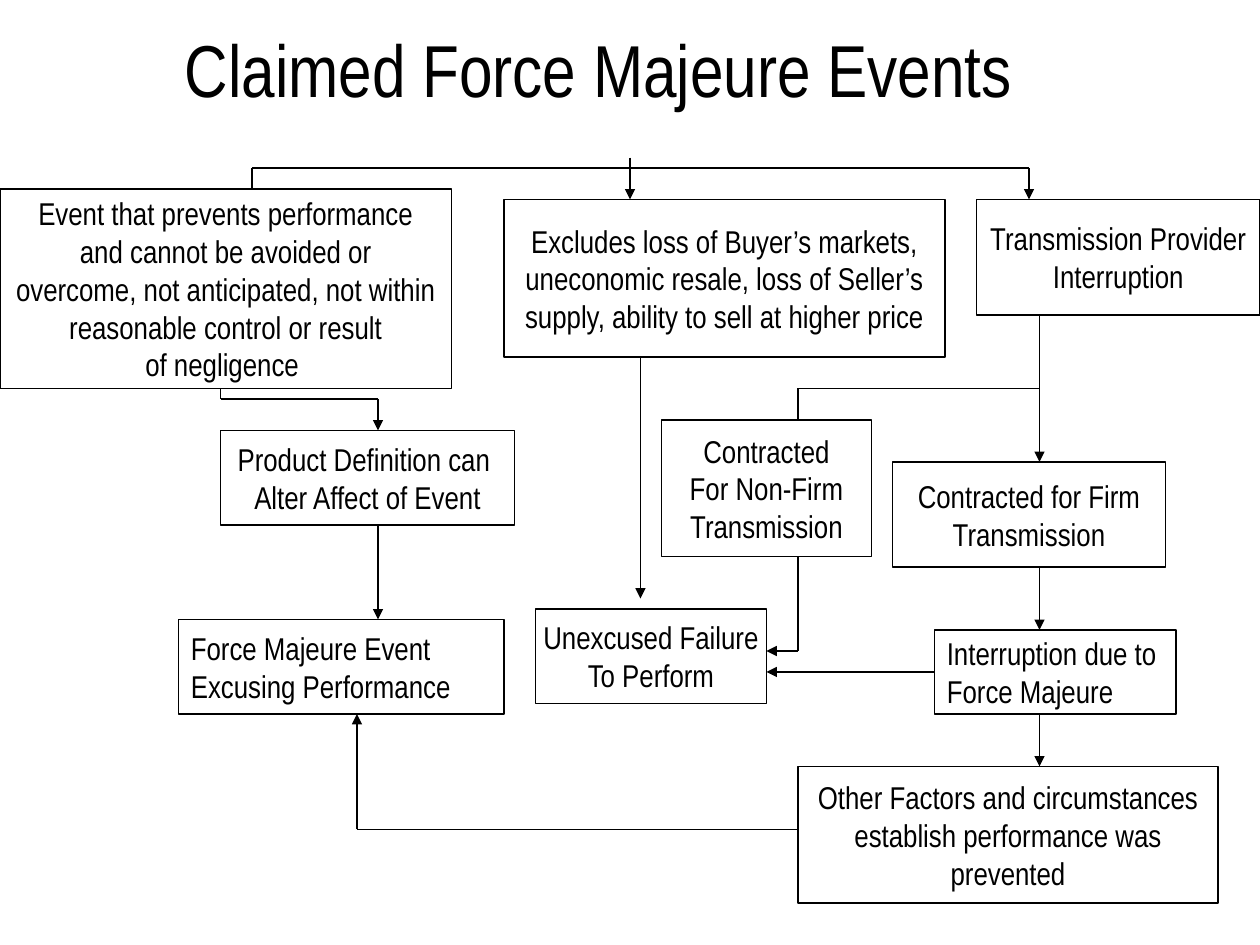
from dataclasses import dataclass

from lxml.etree import SubElement
from pptx import Presentation
from pptx.dml.color import RGBColor
from pptx.enum.shapes import MSO_CONNECTOR as Connector, MSO_SHAPE as Shape
from pptx.enum.text import MSO_ANCHOR as Anchor, MSO_AUTO_SIZE as AutoSize, PP_ALIGN as Align
from pptx.oxml.ns import qn
from pptx.util import Cm, Pt

FONT = "Arial Narrow"
BLACK = "000000"
WHITE = "FFFFFF"
LEFT_SIDE = 1


@dataclass
class Box:
    left: float
    top: float
    width: float
    height: float
    paragraphs: list[str]
    align: Align = Align.CENTER


@dataclass
class Route:
    points: list[tuple[float, float]]
    arrow: bool = True


TITLE = Box(17, 1, 80, 12, ["Claimed Force Majeure Events"])

INTERRUPTION = Box(89, 60, 23, 8, ["Interruption due to", "Force Majeure"], Align.LEFT)

BOXES = [
    Box(0, 18, 43, 19, [
        "Event that prevents performance",
        "and cannot be avoided or",
        "overcome, not anticipated, not within",
        "reasonable control or result",
        "of negligence ",
    ]),
    Box(48, 19, 42, 15, [
        "Excludes loss of Buyer’s markets,",
        "uneconomic resale, loss of Seller’s",
        "supply, ability to sell at higher price",
    ]),
    Box(93, 19, 27, 11, ["Transmission Provider", "Interruption"]),
    Box(21, 41, 28, 9, ["Product Definition can ", "Alter Affect of Event"]),
    Box(51, 58, 22, 9, ["Unexcused Failure", "To Perform"]),
    Box(17, 59, 31, 9, ["Force Majeure Event", "Excusing Performance"], Align.LEFT),
    Box(85, 44, 26, 10, ["Contracted for Firm", "Transmission"]),
    Box(76, 73, 40, 13, [
        "Other Factors and circumstances\nestablish performance was",
        "prevented",
    ]),
    Box(63, 40, 20, 13, ["Contracted", "For Non-Firm", "Transmission"]),
]

ROUTES = [
    Route([(60, 16), (24, 16), (24, 19)]),
    Route([(60, 16), (98, 16), (98, 19)]),
    Route([(60, 15), (60, 19)]),
    Route([(21, 32.5), (21, 38), (36, 38), (36, 41)]),
    Route([(36, 50), (36, 55), (36, 59)]),
    Route([(99, 30), (99, 39)], arrow=False),
    Route([(99, 37), (76, 37), (76, 42)], arrow=False),
    Route([(99, 38), (99, 44)]),
    Route([(61, 34), (61, 56), (61, 57)]),
    Route([(76, 53), (76, 62), (73, 62)]),
    Route([(99, 54), (99, 56), (99, 57), (99, 59), (99, 60)]),
    Route([(99, 68), (99, 72)], arrow=False),
    Route([(99, 71), (99, 73)]),
    Route([(76, 79), (34, 79), (34, 69), (34, 68)]),
]


def grid(cells: float) -> Cm:
    return Cm(cells * 2.54 / 12)


def color(value: str) -> RGBColor:
    return RGBColor.from_string(value)


def write_text(
    shape, box: Box, size: float, side_margin: float = 0.25, line_spacing: float = 1.0
) -> None:
    frame = shape.text_frame
    frame.word_wrap = False
    frame.auto_size = AutoSize.NONE
    frame.vertical_anchor = Anchor.MIDDLE
    frame.margin_left = frame.margin_right = Cm(side_margin)
    frame.margin_top = frame.margin_bottom = Cm(0.13)
    for index, text in enumerate(box.paragraphs):
        paragraph = frame.add_paragraph() if index else frame.paragraphs[0]
        paragraph.alignment = box.align
        paragraph.line_spacing = line_spacing
        for number, line in enumerate(text.split("\n")):
            if number:
                paragraph.add_line_break()
            run = paragraph.add_run()
            run.text = line
            run.font.name = FONT
            run.font.size = Pt(size)
            run.font.color.rgb = color(BLACK)


def add_title(slide, box: Box) -> None:
    title = slide.shapes.title
    title.left, title.top = grid(box.left), grid(box.top)
    title.width, title.height = grid(box.width), grid(box.height)
    write_text(title, box, 42, side_margin=0, line_spacing=0.9)


def add_box(slide, box: Box):
    shape = slide.shapes.add_shape(
        Shape.RECTANGLE, grid(box.left), grid(box.top), grid(box.width), grid(box.height)
    )
    shape.shadow.inherit = False
    shape.fill.solid()
    shape.fill.fore_color.rgb = color(WHITE)
    shape.line.color.rgb = color(BLACK)
    shape.line.width = Pt(0.75)
    write_text(shape, box, 18)
    return shape


def add_segment(slide, start: tuple[float, float], end: tuple[float, float], arrow: bool):
    connector = slide.shapes.add_connector(
        Connector.STRAIGHT, *map(grid, start), *map(grid, end)
    )
    connector.line.color.rgb = color(BLACK)
    connector.line.width = Pt(0.75)
    properties = connector._element.spPr
    if arrow:
        SubElement(properties.find(qn("a:ln")), qn("a:tailEnd"), type="triangle")
    SubElement(properties, qn("a:effectLst"))
    return connector


def add_route(slide, route: Route) -> None:
    last = len(route.points) - 2
    for index, (start, end) in enumerate(zip(route.points, route.points[1:])):
        add_segment(slide, start, end, route.arrow and index == last)


def main() -> None:
    presentation = Presentation()
    presentation.slide_width, presentation.slide_height = grid(120), grid(90)
    slide = presentation.slides.add_slide(presentation.slide_layouts[5])
    add_title(slide, TITLE)
    for route in ROUTES:
        add_route(slide, route)
    for box in BOXES:
        add_box(slide, box)
    interruption = add_box(slide, INTERRUPTION)
    failure_arrow = add_segment(slide, (89, 64), (73, 64), arrow=True)
    failure_arrow.begin_connect(interruption, LEFT_SIDE)
    presentation.save("out.pptx")


if __name__ == "__main__":
    main()
